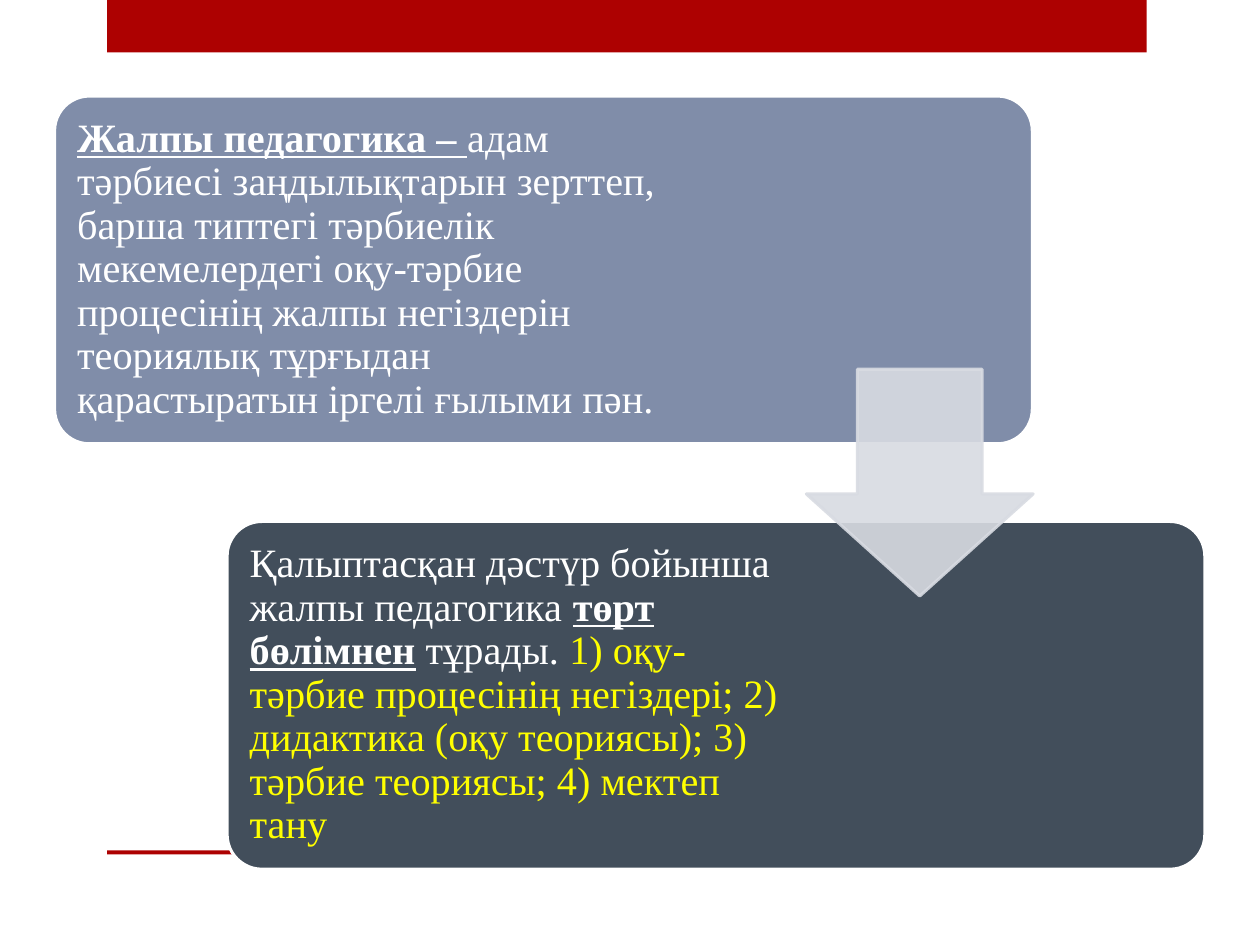
from dataclasses import dataclass
from typing import Optional

from lxml import etree
from pptx import Presentation
from pptx.dml import color
from pptx.enum import shapes, text
from pptx.oxml import ns
from pptx.util import Pt

RED = color.RGBColor(0xAD, 0x01, 0x01)
BLUE_GREY = color.RGBColor(0x80, 0x8D, 0xA9)
SLATE = color.RGBColor(0x42, 0x4E, 0x5B)
PALE = color.RGBColor(0xD8, 0xDB, 0xE2)
WHITE = color.RGBColor(0xFF, 0xFF, 0xFF)
YELLOW = color.RGBColor(0xFF, 0xFF, 0x00)

FONT = "Times New Roman"
FONT_SIZE = 23
CARD_WIDTH, CARD_HEIGHT = 558.7, 198.7
CARD_INSET = 5.8  # from the card edge to its text area
TEXT_MARGIN = 7.2
OUTLINE = 1.75


@dataclass(frozen=True)
class Box:
    left: float
    top: float
    width: float
    height: float


@dataclass(frozen=True)
class Phrase:
    wording: str
    ink: color.RGBColor = WHITE
    strong: bool = False  # bold and underlined


@dataclass(frozen=True)
class Card:
    left: float
    top: float
    fill: color.RGBColor
    text_width: float
    phrases: tuple[Phrase, ...]


BARS = (Box(61.2, 0, 594, 30), Box(61.2, 486, 594, 2.2))

CARDS = (
    Card(31.2, 54.9, BLUE_GREY, 353.5, (
        Phrase("Жалпы педагогика – ", strong=True),
        Phrase("адам тəрбиесі заңдылықтарын зерттеп, барша типтегі тəрбиелік "
               "мекемелердегі оқу-тəрбие процесінің жалпы негіздерін теориялық "
               "тұрғыдан қарастыратын іргелі ғылыми пəн."),
    )),
    Card(129.8, 298, SLATE, 319.7, (
        Phrase("Қалыптасқан дəстүр бойынша жалпы педагогика "),
        Phrase("төрт бөлімнен", strong=True),
        Phrase(" тұрады. "),
        Phrase("1) оқу-тəрбие процесінің негіздері; 2) дидактика (оқу теориясы); "
               "3) тəрбие теориясы; 4) мектеп тану", YELLOW),
    )),
)

ARROW = Box(460.8, 211, 129.6, 129.6)


def add_figure(slide, preset, box: Box, fill: color.RGBColor,
               line: Optional[color.RGBColor] = None,
               adjustments: tuple[float, ...] = ()):
    """Add a flat preset shape, with an outline if a line colour is given."""
    figure = slide.shapes.add_shape(
        preset, Pt(box.left), Pt(box.top), Pt(box.width), Pt(box.height))
    figure.shadow.inherit = False
    figure.fill.solid()
    figure.fill.fore_color.rgb = fill
    if line is None:
        figure.line.fill.background()
    else:
        figure.line.color.rgb = line
        figure.line.width = Pt(OUTLINE)
    for index, value in enumerate(adjustments):
        figure.adjustments[index] = value
    return figure


def set_opacity(figure, percent: int) -> None:
    """Make both the fill and the outline of a shape translucent."""
    for tone in figure._element.spPr.iter(ns.qn("a:srgbClr")):
        etree.SubElement(tone, ns.qn("a:alpha")).set("val", str(percent * 1000))


def add_card(slide, card: Card) -> None:
    add_figure(slide, shapes.MSO_SHAPE.ROUNDED_RECTANGLE,
               Box(card.left, card.top, CARD_WIDTH, CARD_HEIGHT),
               card.fill, WHITE, (0.1,))

    label = slide.shapes.add_textbox(
        Pt(card.left + CARD_INSET), Pt(card.top + CARD_INSET),
        Pt(card.text_width), Pt(CARD_HEIGHT - 2 * CARD_INSET))
    frame = label.text_frame
    frame.word_wrap = True
    frame.vertical_anchor = text.MSO_ANCHOR.MIDDLE
    frame.margin_left = frame.margin_right = Pt(TEXT_MARGIN)
    frame.margin_top = frame.margin_bottom = Pt(TEXT_MARGIN)

    paragraph = frame.paragraphs[0]
    paragraph.alignment = text.PP_ALIGN.LEFT
    paragraph.line_spacing = 0.9
    paragraph.space_after = Pt(8)
    for phrase in card.phrases:
        run = paragraph.add_run()
        run.text = phrase.wording
        run.font.name = FONT
        run.font.size = Pt(FONT_SIZE)
        run.font.bold = run.font.underline = phrase.strong
        run.font.color.rgb = phrase.ink


def main() -> None:
    deck = Presentation()
    deck.slide_width, deck.slide_height = Pt(720), Pt(540)
    slide = deck.slides.add_slide(deck.slide_layouts[6])

    # Red bars at the top and bottom
    for bar in BARS:
        add_figure(slide, shapes.MSO_SHAPE.RECTANGLE, bar, RED)

    # Two staggered cards: the definition, then its four parts
    for card in CARDS:
        add_card(slide, card)

    # Translucent arrow leading from the first card to the second
    arrow = add_figure(slide, shapes.MSO_SHAPE.DOWN_ARROW, ARROW,
                       PALE, PALE, (0.55, 0.45))
    set_opacity(arrow, 90)

    deck.save("out.pptx")


if __name__ == "__main__":
    main()
